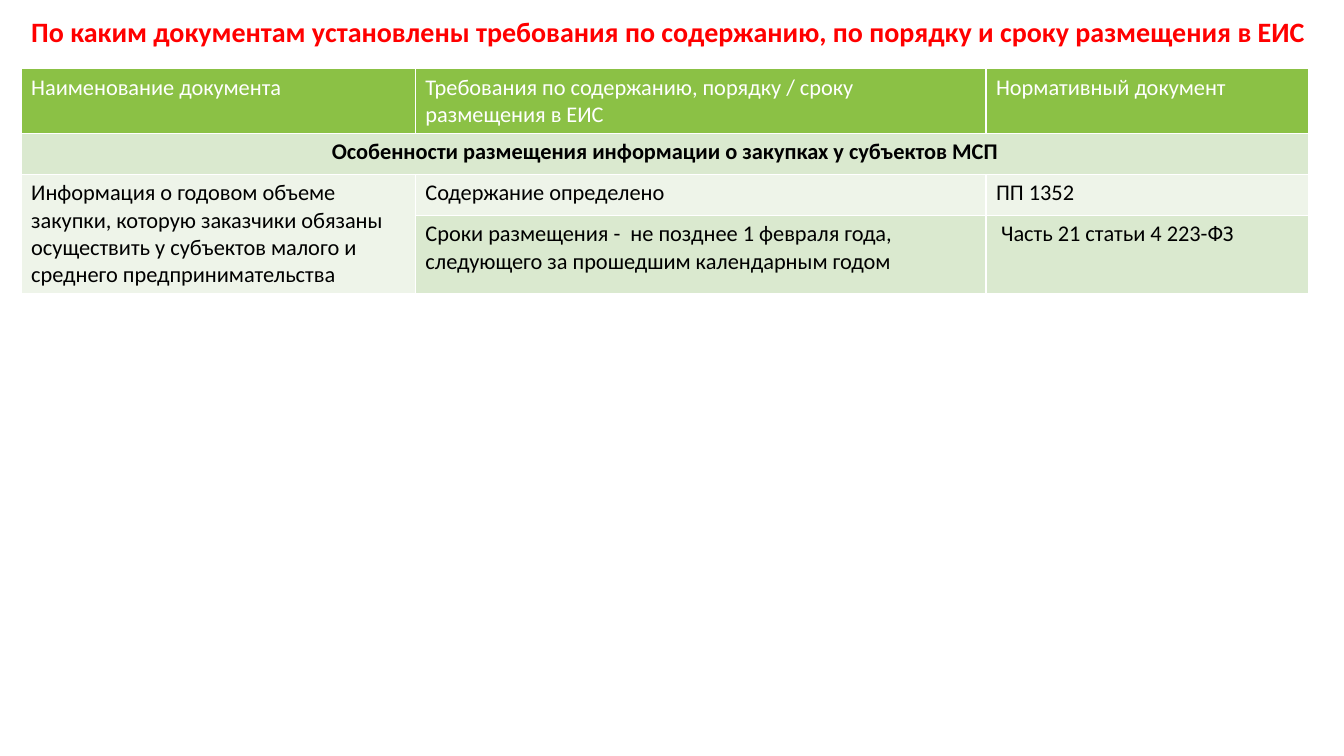
from pptx import Presentation
from pptx.dml.color import RGBColor
from pptx.enum.text import MSO_ANCHOR, PP_ALIGN
from pptx.util import Pt

RED = RGBColor(0xFF, 0x00, 0x00)
WHITE = RGBColor(0xFF, 0xFF, 0xFF)
BLACK = RGBColor(0x00, 0x00, 0x00)
HEADER_GREEN = RGBColor(0x8B, 0xC1, 0x45)
BAND_GREEN = RGBColor(0xDA, 0xE9, 0xCF)
PALE_GREEN = RGBColor(0xEE, 0xF4, 0xE9)

TITLE = ("По каким документам установлены требования по содержанию, "
         "по порядку и сроку размещения в ЕИС")
HEADINGS = ["Наименование документа",
            "Требования по содержанию, порядку / сроку размещения в ЕИС",
            "Нормативный документ"]
SECTION = "Особенности размещения информации о закупках у субъектов МСП"
DOCUMENT = ("Информация о годовом объеме закупки, которую заказчики обязаны "
            "осуществить у субъектов малого и среднего предпринимательства")
TERMS = ("Сроки размещения -  не позднее 1 февраля года, "
         "следующего за прошедшим календарным годом")
ROWS = [HEADINGS,
        [SECTION, "", ""],
        [DOCUMENT, "Содержание определено", "ПП 1352"],
        ["", TERMS, " Часть 21 статьи 4 223-ФЗ"]]

COLUMN_WIDTHS = [281.6, 407.6, 230.6]
ROW_HEIGHTS = [46.3, 29.2, 29.2, 56.1]
ROW_FILLS = [HEADER_GREEN, BAND_GREEN, PALE_GREEN, BAND_GREEN]
HEADER_FONT = {"name": "Calibri", "size": Pt(16), "bold": False}
SECTION_FONT = HEADER_FONT | {"bold": True}
TITLE_FONT = {"name": "Calibri", "size": Pt(20), "bold": True}


def format_font(font, values, color):
    for name, value in values.items():
        setattr(font, name, value)
    font.color.rgb = color


def place_title(slide, left, top, width, height):
    title = slide.shapes.title
    title.left, title.top = Pt(left), Pt(top)
    title.width, title.height = Pt(width), Pt(height)
    frame = title.text_frame
    frame.text = TITLE
    frame.word_wrap = True
    frame.vertical_anchor = MSO_ANCHOR.MIDDLE
    heading = frame.paragraphs[0]
    heading.alignment = PP_ALIGN.LEFT
    heading.line_spacing = 0.9
    format_font(heading.runs[0].font, TITLE_FONT, RED)


def add_requirements(slide, left, top):
    """Add the table; its white rules come from the default table style."""
    table = slide.shapes.add_table(
        len(ROWS), len(HEADINGS), Pt(left), Pt(top),
        Pt(sum(COLUMN_WIDTHS)), Pt(sum(ROW_HEIGHTS))).table
    for column, width in zip(table.columns, COLUMN_WIDTHS):
        column.width = Pt(width)
    for r, (texts, height, fill) in enumerate(zip(ROWS, ROW_HEIGHTS, ROW_FILLS)):
        table.rows[r].height = Pt(height)
        for c, text in enumerate(texts):
            cell = table.cell(r, c)
            cell.fill.solid()
            cell.fill.fore_color.rgb = fill
            cell.text = text
            line = cell.text_frame.paragraphs[0]
            format_font(line.font, HEADER_FONT, WHITE if r == 0 else BLACK)
            for run in line.runs:
                format_font(run.font, SECTION_FONT if r == 1 else HEADER_FONT,
                            WHITE if r == 0 else BLACK)

    section = table.cell(1, 0)
    section.merge(table.cell(1, 2))
    section.text_frame.paragraphs[0].alignment = PP_ALIGN.CENTER
    document = table.cell(2, 0)
    document.merge(table.cell(3, 0))
    document.fill.fore_color.rgb = PALE_GREEN


def main():
    deck = Presentation()
    deck.slide_width, deck.slide_height = Pt(960), Pt(540)
    slide = deck.slides.add_slide(deck.slide_layouts[5])
    place_title(slide, 15.1, 7.2, 932.4, 33.1)
    add_requirements(slide, 15.1, 49)
    deck.save("out.pptx")


if __name__ == "__main__":
    main()
